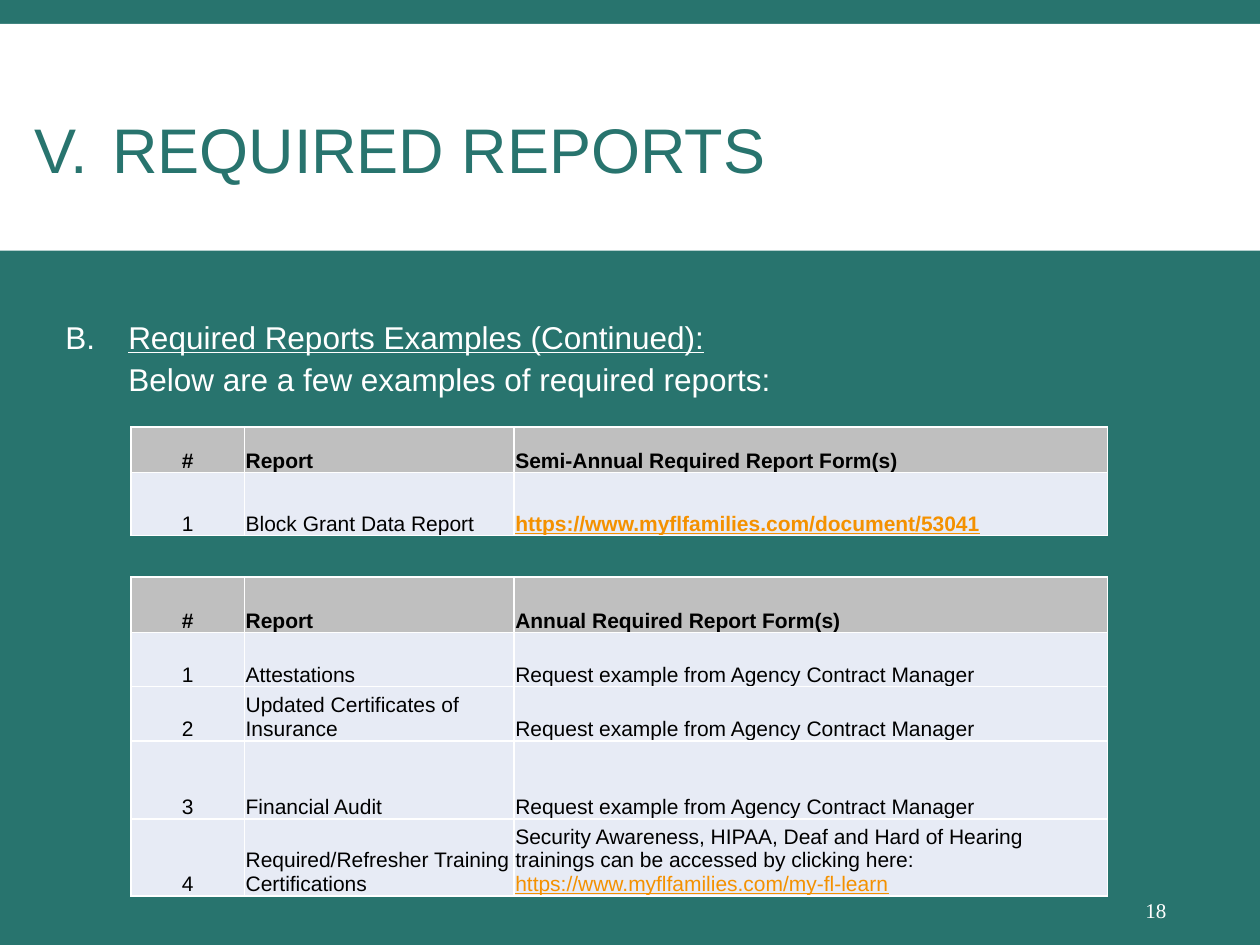
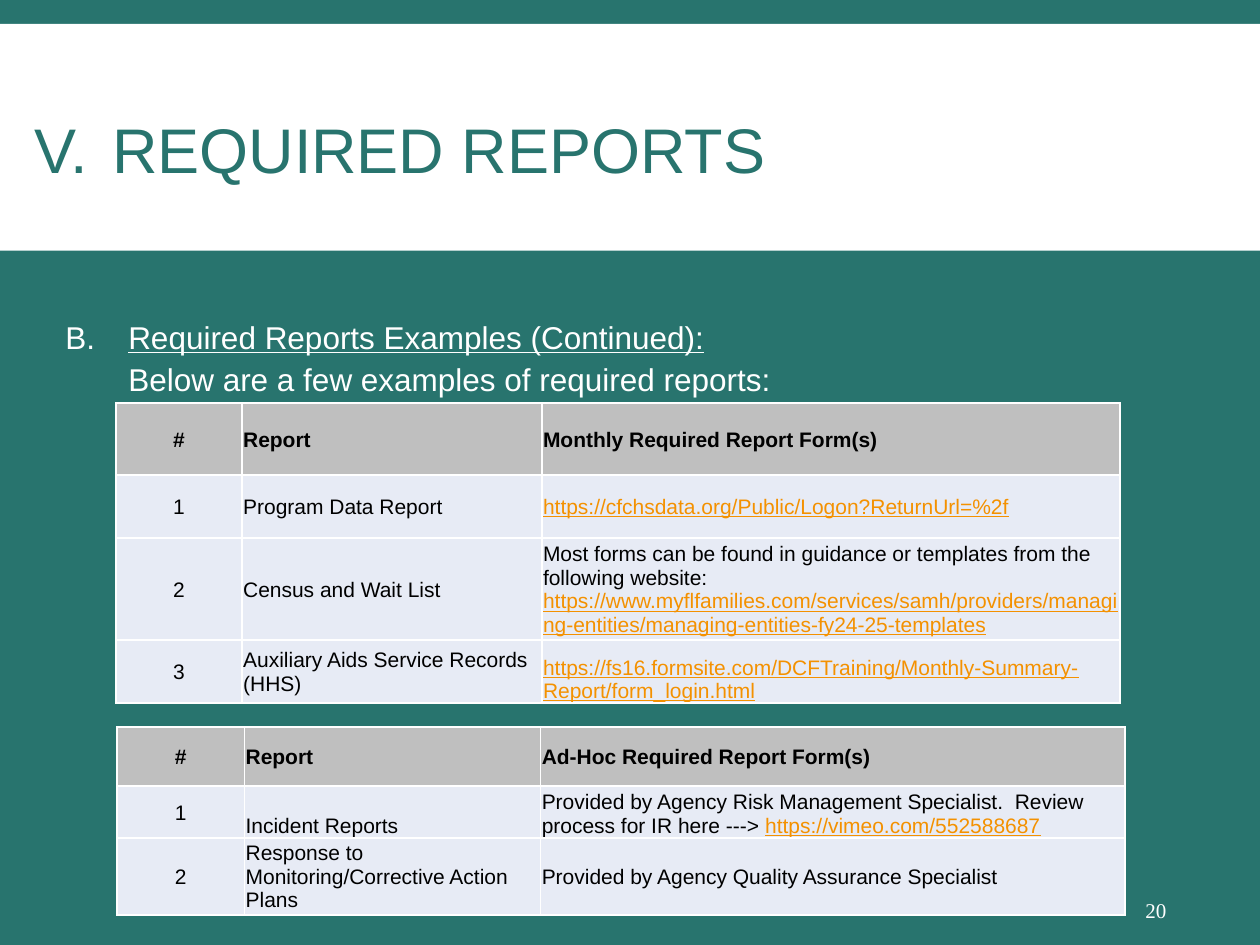
"""Build two slides listing examples of required reports."""
from lxml.etree import SubElement
from pptx import Presentation
from pptx.dml.color import RGBColor
from pptx.enum.shapes import MSO_SHAPE
from pptx.enum.text import MSO_ANCHOR, PP_ALIGN
from pptx.oxml.ns import qn
from pptx.util import Inches, Pt

COLORS = {name: RGBColor.from_string(value) for name, value in {
    "teal": "28746E", "white": "FFFFFF", "header": "BFBFBF",
    "row": "E7EBF5", "text": "000000", "link": "F49100"}.items()}
MIDDLE, BOTTOM = MSO_ANCHOR.MIDDLE, MSO_ANCHOR.BOTTOM
EXAMPLE = "Request example from Agency Contract Manager"

SLIDES = [
    {"number": "18", "tables": [
        {"at": (1.04, 3.39), "columns": [0.9, 2.14, 4.71], "rows": [0.36, 0.5],
         "anchor": BOTTOM, "low": [], "bold_links": True,
         "form": "Semi-Annual Required Report Form(s)",
         "reports": [("Block Grant Data Report",
                      ["https://www.myflfamilies.com/document/53041"])]},
        {"at": (1.04, 4.58), "columns": [0.9, 2.14, 4.71],
         "rows": [0.44, 0.43, 0.43, 0.62, 0.6],
         "anchor": BOTTOM, "low": [], "bold_links": False,
         "form": "Annual Required Report Form(s)",
         "reports": [
             ("Attestations", [EXAMPLE]),
             ("Updated Certificates of Insurance", [EXAMPLE]),
             ("Financial Audit", [EXAMPLE]),
             ("Required/Refresher Training Certifications",
              ["Security Awareness, HIPAA, Deaf and Hard of Hearing trainings "
               "can be accessed by clicking here: ",
               "https://www.myflfamilies.com/my-fl-learn"])]}]},
    {"number": "20", "tables": [
        {"at": (0.92, 3.2), "columns": [1, 2.38, 4.59], "rows": [0.57, 0.5, 0.75, 0.5],
         "anchor": MIDDLE, "low": [(3, 2)], "bold_links": False,
         "form": "Monthly Required Report Form(s)",
         "reports": [
             ("Program Data Report",
              ["https://cfchsdata.org/Public/Logon?ReturnUrl=%2f"]),
             ("Census and Wait List",
              ["Most forms can be found in guidance or templates from the "
               "following website: ",
               "https://www.myflfamilies.com/services/samh/providers/"
               "managing-entities/managing-entities-fy24-25-templates"]),
             ("Auxiliary Aids Service Records (HHS)",
              ["https://fs16.formsite.com/DCFTraining/"
               "Monthly-Summary-Report/form_login.html"])]},
        {"at": (0.93, 5.77), "columns": [1.01, 2.35, 4.64], "rows": [0.47, 0.41, 0.57],
         "anchor": MIDDLE, "low": [(1, 1), (1, 2)], "bold_links": False,
         "form": "Ad-Hoc Required Report Form(s)",
         "reports": [
             ("Incident Reports",
              ["Provided by Agency Risk Management Specialist.  Review process "
               "for IR here ---> ", "https://vimeo.com/552588687"]),
             ("Response to Monitoring/Corrective Action Plans",
              ["Provided by Agency Quality Assurance Specialist"])]}]},
]


def format_paragraph(paragraph, size, color, name="Arial", indent=0, hanging=0,
                     numbering=None, start=1):
    properties = paragraph._p.get_or_add_pPr()
    if indent:
        properties.set("marL", str(Inches(indent)))
        properties.set("indent", str(Inches(-hanging)))
    if numbering:
        bullet_color = SubElement(properties, qn("a:buClr"))
        SubElement(bullet_color, qn("a:srgbClr"), val=str(COLORS[color]))
        SubElement(properties, qn("a:buFont"), typeface=name)
        SubElement(properties, qn("a:buAutoNum"), type=numbering, startAt=str(start))
    paragraph.font.name = name
    paragraph.font.size = Pt(size)
    paragraph.font.color.rgb = COLORS[color]


def add_report_table(slide, report):
    columns, rows = report["columns"], report["rows"]
    left, top = report["at"]
    table = slide.shapes.add_table(
        len(rows), len(columns), Inches(left), Inches(top),
        Inches(sum(columns)), Inches(sum(rows))).table
    for column, width in zip(table.columns, columns):
        column.width = Inches(width)
    for row, height in zip(table.rows, rows):
        row.height = Inches(height)
    contents = [(["#"], ["Report"], [report["form"]])]
    for number, (title, form) in enumerate(report["reports"], 1):
        contents.append(([str(number)], [title], form))
    for row_index, row_contents in enumerate(contents):
        for column_index, pieces in enumerate(row_contents):
            cell = table.cell(row_index, column_index)
            cell.margin_left = cell.margin_right = cell.margin_top = Inches(0.01)
            cell.margin_bottom = 0
            low = (row_index, column_index) in report["low"]
            cell.vertical_anchor = BOTTOM if low else report["anchor"]
            for side in ("lnL", "lnR", "lnT", "lnB"):
                border = SubElement(cell._tc.get_or_add_tcPr(), qn(f"a:{side}"),
                                    w=str(Pt(1)))
                line_fill = SubElement(border, qn("a:solidFill"))
                SubElement(line_fill, qn("a:srgbClr"), val=str(COLORS["white"]))
            cell.fill.solid()
            cell.fill.fore_color.rgb = COLORS["row" if row_index else "header"]
            paragraph = cell.text_frame.paragraphs[0]
            paragraph.alignment = PP_ALIGN.LEFT if column_index else PP_ALIGN.CENTER
            format_paragraph(paragraph, 12, "text")
            paragraph.font.bold = row_index == 0
            for piece in pieces:
                run = paragraph.add_run()
                run.text = piece
                if piece.startswith("https"):
                    run.font.color.rgb = COLORS["link"]
                    run.font.underline = True
                    run.font.bold = report["bold_links"]


presentation = Presentation()
presentation.slide_width = Inches(10)
presentation.slide_height = Inches(7.5)
background = presentation.slide_master.background.fill
background.solid()
background.fore_color.rgb = COLORS["teal"]

for content in SLIDES:
    slide = presentation.slides.add_slide(presentation.slide_layouts[5])

    band = slide.shapes.add_shape(
        MSO_SHAPE.RECTANGLE, 0, Inches(0.19), Inches(10), Inches(1.8))
    band.shadow.inherit = False
    band.fill.solid()
    band.fill.fore_color.rgb = COLORS["white"]
    band.line.fill.background()
    slide.shapes._spTree.insert(2, band._element)

    title = slide.shapes.title
    title.left, title.top = Inches(0.17), Inches(0.35)
    title.width, title.height = Inches(9.08), Inches(1.65)
    title.text_frame.text = "REQUIRED REPORTS"
    title.text_frame.vertical_anchor = MIDDLE
    paragraph = title.text_frame.paragraphs[0]
    paragraph.alignment = PP_ALIGN.LEFT
    format_paragraph(paragraph, 36, "teal", indent=0.62, hanging=0.62,
                     numbering="romanUcPeriod", start=5)

    number_box = slide.shapes.add_textbox(
        Inches(9.04), Inches(7.02), Inches(0.78), Inches(0.4))
    number_box.text_frame.margin_left = Inches(0.05)
    number_box.text_frame.vertical_anchor = MIDDLE
    number_box.text_frame.word_wrap = True
    number_box.text_frame.text = content["number"]
    format_paragraph(number_box.text_frame.paragraphs[0], 12, "white", "Times New Roman")

    intro = slide.shapes.add_textbox(
        Inches(0.42), Inches(2.45), Inches(9.17), Inches(0.75)).text_frame
    intro.word_wrap = True
    intro.text = ("Required Reports Examples (Continued):\n"
                  "Below are a few examples of required reports:")
    heading, sentence = intro.paragraphs
    format_paragraph(heading, 18, "white", indent=0.5, hanging=0.5,
                     numbering="alphaUcPeriod", start=2)
    heading.font.underline = True
    format_paragraph(sentence, 18, "white", indent=0.5)
    heading.line_spacing = sentence.line_spacing = 1.07
    sentence.space_before = Pt(1)

    for report in content["tables"]:
        add_report_table(slide, report)

presentation.save("out.pptx")
